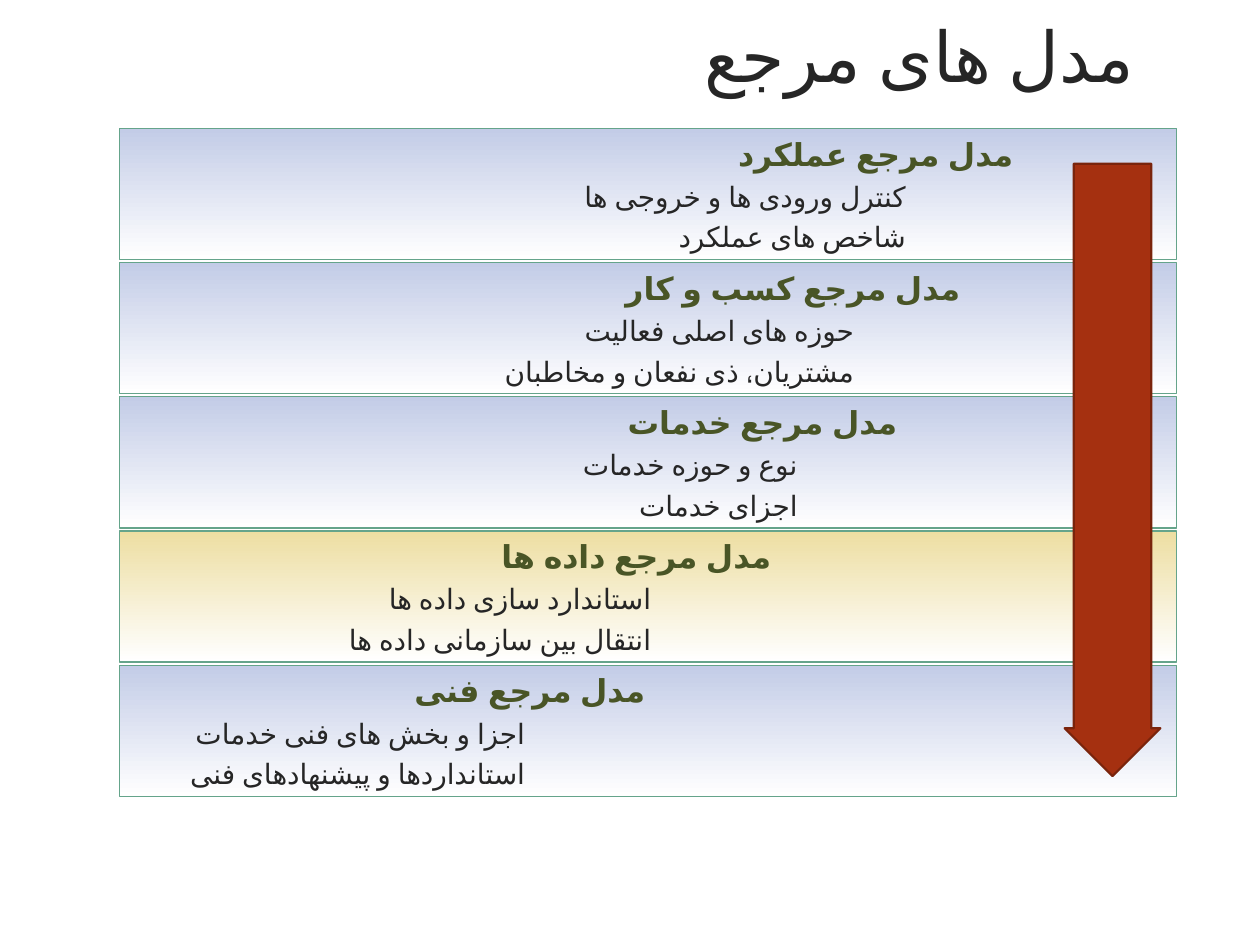
from pptx import Presentation
from pptx.dml.color import RGBColor
from pptx.enum.shapes import MSO_SHAPE as Shape
from pptx.enum.text import MSO_ANCHOR as Anchor, PP_ALIGN as Align
from pptx.util import Inches, Pt

FONT = "TeX Gyre Adventor"
DARK, OLIVE, TEAL = "262626", "495526", "65A48B"
BLUE, YELLOW = "C3CCE7", "EDDEA2"
WIDTH, HEIGHT = 10, 7.5
BAND_BOX = (0.95, 1.02, 8.39, 5.3)
BAND_GAP = 0.025

BANDS = [
    (BLUE, 1.2, 2.05, "مدل مرجع عملکرد",
     ["کنترل ورودی ها و خروجی ها", "شاخص های عملکرد"]),
    (BLUE, 1.62, 2.46, "مدل مرجع کسب و کار",
     ["حوزه های اصلی فعالیت", "مشتریان، ذی نفعان و مخاطبان"]),
    (BLUE, 2.12, 2.91, "مدل مرجع خدمات",
     ["نوع و حوزه خدمات", "اجزای خدمات"]),
    (YELLOW, 3.12, 4.07, "مدل مرجع داده ها",
     ["استاندارد سازی داده ها", "انتقال بین سازمانی داده ها"]),
    (BLUE, 4.12, 5.07, "مدل مرجع فنی",
     ["اجزا و بخش های فنی خدمات", "استانداردها و پیشنهادهای فنی"]),
]


def color(value):
    """Turn a hex string into a colour."""
    return RGBColor.from_string(value)


def place(shape, box):
    """Move a shape to a box given in inches."""
    shape.left, shape.top, shape.width, shape.height = map(Inches, box)


def write_rtl(para, text, size, tone, bold=False, indent=0):
    """Write one right-to-left Persian paragraph with its start indent."""
    para.text = text
    para.alignment = Align.RIGHT
    properties = para._p.get_or_add_pPr()
    properties.set("rtl", "1")
    properties.set("marL", str(Inches(indent)))
    properties.set("indent", "0")
    for span in para.runs:
        span.font.size = Pt(size)
        span.font.bold = bold
        span.font.name = FONT
        span.font.color.rgb = color(tone)
        span.font._element.set("lang", "fa-IR")


def add_title(page, box, text):
    """Fill the title placeholder and place it."""
    title = page.shapes.title
    place(title, box)
    title.text_frame.vertical_anchor = Anchor.TOP
    write_rtl(title.text_frame.paragraphs[0], text, 40, DARK)


def add_band(page, box, tone, heading_indent, detail_indent, heading, details):
    """Draw one model band with its heading and details."""
    band = page.shapes.add_shape(Shape.RECTANGLE, *map(Inches, box))
    band.shadow.inherit = False
    band.fill.gradient()
    band.fill.gradient_angle = 90
    for stop, position, shade in zip(band.fill.gradient_stops, (0, 1), ("FFFFFF", tone)):
        stop.position = position
        stop.color.rgb = color(shade)
    band.line.color.rgb = color(TEAL)
    band.line.width = Pt(0.75)
    frame = band.text_frame
    frame.word_wrap = True
    frame.vertical_anchor = Anchor.MIDDLE
    write_rtl(frame.paragraphs[0], heading, 18, OLIVE, True, heading_indent)
    for detail in details:
        para = frame.add_paragraph()
        write_rtl(para, detail, 16, DARK, indent=detail_indent)
        para.space_before = Pt(4)


def add_bands(page, box, bands):
    """Stack the bands evenly in a box."""
    left, top, width, height = box
    pitch = (height + BAND_GAP) / len(bands)
    for row, band in enumerate(bands):
        add_band(page, (left, top + row * pitch, width, pitch - BAND_GAP), *band)


def add_arrow(page, box):
    """Draw the downward arrow across the bands."""
    arrow = page.shapes.add_shape(Shape.DOWN_ARROW, *map(Inches, box))
    arrow.shadow.inherit = False
    arrow.adjustments[0] = 0.81
    arrow.adjustments[1] = 0.5
    arrow.fill.solid()
    arrow.fill.fore_color.rgb = color("A53010")
    arrow.line.color.rgb = color("7A240C")
    arrow.line.width = Pt(1.25)


def main():
    """Build and save the deck."""
    deck = Presentation()
    deck.slide_width, deck.slide_height = Inches(WIDTH), Inches(HEIGHT)
    page = deck.slides.add_slide(deck.slide_layouts[5])
    add_title(page, (0.6, 0.05, 8.5, 1.25), "مدل های مرجع")
    add_bands(page, BAND_BOX, BANDS)
    left, top, width, height = BAND_BOX
    add_arrow(page, (left + width - 0.89, top + 0.28, 0.76, height - 0.44))
    deck.save("out.pptx")


if __name__ == "__main__":
    main()
